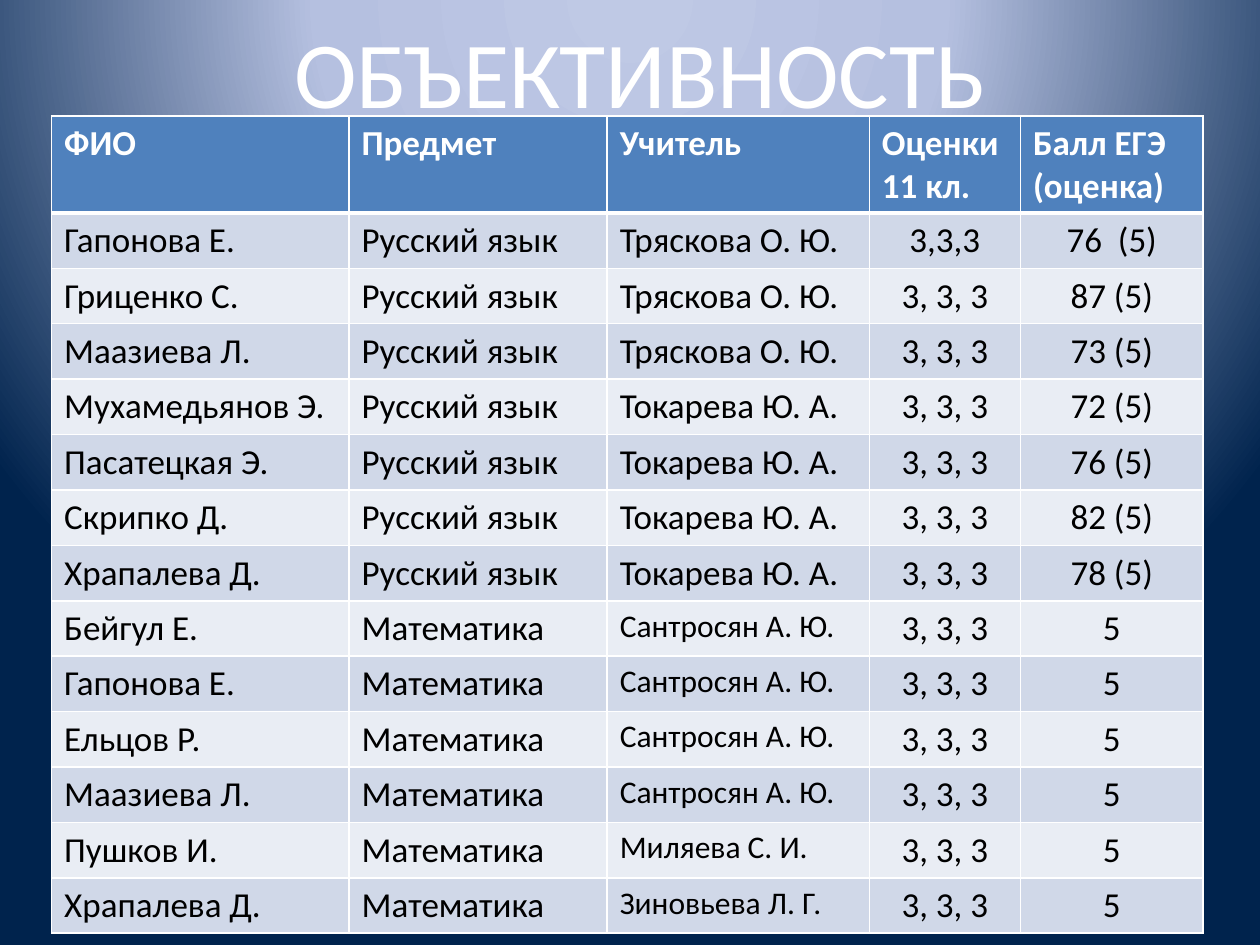
from dataclasses import dataclass

from lxml import etree
from pptx import Presentation
from pptx.dml.color import RGBColor
from pptx.enum import text
from pptx.oxml import ns
from pptx.util import Inches, Pt


@dataclass(frozen=True)
class Theme:
    font: str = "Calibri"
    white: str = "FFFFFF"
    ink: str = "000000"
    head: str = "4F81BD"
    bands: tuple = ("D0D8E8", "E9EDF4")
    glow: tuple = ((0, "BFC9E5"), (40, "B5C0E0"), (100, "00234D"))
    title: int = 54
    body: int = 20
    small: int = 18
    thin: int = 1
    thick: int = 3


def add(parent, tag, **attrs):
    return etree.SubElement(parent, ns.qn(tag), attrs)


class Deck:
    def __init__(self, theme):
        self.theme = theme
        self.prs = Presentation()
        self.prs.slide_width, self.prs.slide_height = Inches(10), Inches(7.5)
        self.slide = self.prs.slides.add_slide(self.prs.slide_layouts[6])

    def glow(self):
        """Fill the background with a round gradient centred above the slide."""
        self.slide.background.fill.gradient()
        grad = self.slide.element.find(".//" + ns.qn("a:gradFill"))
        for child in list(grad):
            grad.remove(child)
        stops = add(grad, "a:gsLst")
        for pos, color in self.theme.glow:
            add(add(stops, "a:gs", pos=str(pos * 1000)), "a:srgbClr", val=color)
        ring = add(grad, "a:path", path="circle")
        add(ring, "a:fillToRect", l="50000", t="-80000", r="50000", b="180000")

    def style(self, frame, size, color, bold=False, center=False):
        for para in frame.paragraphs:
            para.alignment = text.PP_ALIGN.CENTER if center else text.PP_ALIGN.LEFT
            for run in para.runs:
                run.font.name, run.font.size, run.font.bold = self.theme.font, Pt(size), bold
                run.font.color.rgb = RGBColor.from_string(color)

    def title(self, words, x, y, w, h):
        box = self.slide.shapes.add_textbox(Inches(x), Inches(y), Inches(w), Inches(h))
        frame = box.text_frame
        frame.word_wrap = True
        frame.vertical_anchor = text.MSO_ANCHOR.MIDDLE
        frame.text = words
        self.style(frame, self.theme.title, self.theme.white, center=True)

    def edge(self, cell, top, bottom):
        """Draw the four borders of a cell; they must precede its fill."""
        thin = self.theme.thin
        sides = {"L": thin, "R": thin, "T": top, "B": bottom}
        props = cell._tc.get_or_add_tcPr()
        for side, width in sides.items():
            line = add(props, "a:ln" + side, w=str(Pt(width)))
            add(add(line, "a:solidFill"), "a:srgbClr", val=self.theme.white)

    def table(self, data, x, y, cols, rows):
        look = self.theme
        table = self.slide.shapes.add_table(
            len(rows), len(cols), Inches(x), Inches(y),
            Inches(sum(cols)), Inches(sum(rows))).table
        table.first_row = table.horz_banding = False
        for col, width in zip(table.columns, cols):
            col.width = Inches(width)
        for r, (row, height, values) in enumerate(zip(table.rows, rows, data)):
            row.height = Inches(height)
            head = r == 0
            for c, (cell, value) in enumerate(zip(row.cells, values)):
                cell.text_frame.text = value
                small = c == 2 and values[1] == MATH
                self.style(cell.text_frame, look.small if small else look.body,
                           look.white if head else look.ink,
                           bold=head, center=c > 2 and not head)
                self.edge(cell, look.thick if r == 1 else look.thin,
                          look.thick if head else look.thin)
                cell.fill.solid()
                fill = look.head if head else look.bands[(r - 1) % 2]
                cell.fill.fore_color.rgb = RGBColor.from_string(fill)


RUS, MATH = "Русский язык", "Математика"
MARKS = "3, 3, 3"
HEAD = ("ФИО", "Предмет", "Учитель", "Оценки 11 кл.", "Балл ЕГЭ (оценка)")
PUPILS = [
    ("Гапонова Е.", RUS, "Тряскова О. Ю.", "3,3,3", "76  (5)"),
    ("Гриценко С.", RUS, "Тряскова О. Ю.", MARKS, "87 (5)"),
    ("Маазиева Л.", RUS, "Тряскова О. Ю.", MARKS, "73 (5)"),
    ("Мухамедьянов Э.", RUS, "Токарева Ю. А.", MARKS, "72 (5)"),
    ("Пасатецкая Э.", RUS, "Токарева Ю. А.", MARKS, "76 (5)"),
    ("Скрипко Д.", RUS, "Токарева Ю. А.", MARKS, "82 (5)"),
    ("Храпалева Д.", RUS, "Токарева Ю. А.", MARKS, "78 (5)"),
    ("Бейгул Е.", MATH, "Сантросян А. Ю.", MARKS, "5"),
    ("Гапонова Е.", MATH, "Сантросян А. Ю.", MARKS, "5"),
    ("Ельцов Р.", MATH, "Сантросян А. Ю.", MARKS, "5"),
    ("Маазиева Л.", MATH, "Сантросян А. Ю.", MARKS, "5"),
    ("Пушков И.", MATH, "Миляева С. И.", MARKS, "5"),
    ("Храпалева Д.", MATH, "Зиновьева Л. Г.", MARKS, "5"),
]


def main():
    deck = Deck(Theme())
    deck.glow()
    deck.title("ОБЪЕКТИВНОСТЬ", 0.58, 0.13, 9, 0.87)
    deck.table([HEAD] + PUPILS, 0.41, 0.92, cols=(2.36, 2.05, 2.08, 1.2, 1.45),
               rows=[0.77] + [0.44] * len(PUPILS))
    deck.prs.save("out.pptx")


if __name__ == "__main__":
    main()
